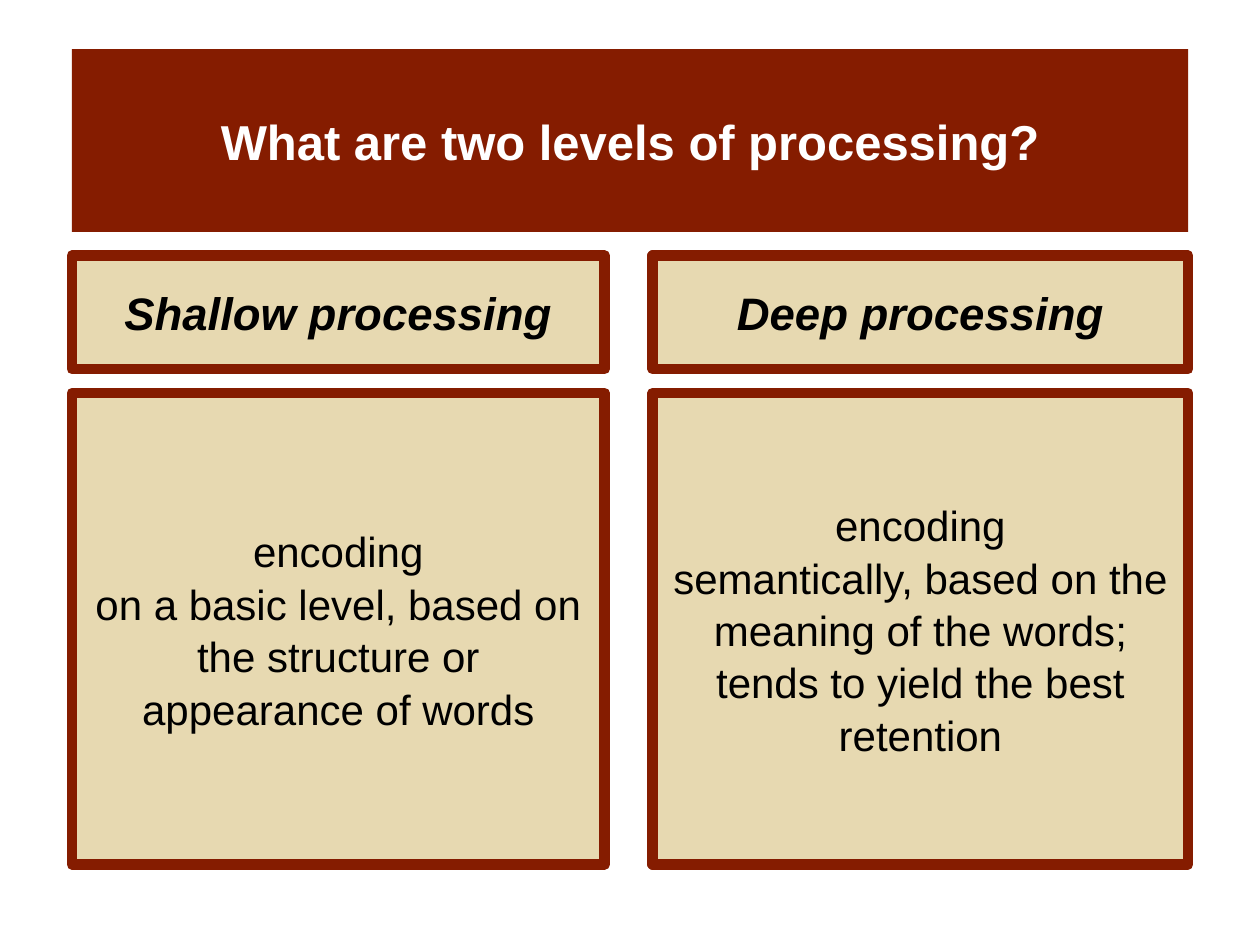
from pptx import Presentation
from pptx.dml.color import RGBColor
from pptx.enum.shapes import MSO_SHAPE
from pptx.enum.text import MSO_ANCHOR, PP_ALIGN
from pptx.util import Inches, Pt

RED, SAND, BLACK, WHITE = "851C00", "E7D9B1", "000000", "FFFFFF"

# Left edge, width, heading and definition of each column
COLUMNS = [
    (0.57, 4.23, "Shallow processing",
     ["encoding",
      "on a basic level, based on the structure or appearance of words"]),
    (5.18, 4.25, "Deep processing",
     ["encoding",
      "semantically, based on the",
      "meaning of the words; tends to yield the best retention"]),
]


def rgb(color):
    return RGBColor.from_string(color)


def place(sp, left, top, width, height):
    sp.left, sp.top = Inches(left), Inches(top)
    sp.width, sp.height = Inches(width), Inches(height)


def fill_solid(sp, color):
    sp.fill.solid()
    sp.fill.fore_color.rgb = rgb(color)


def write(sp, lines, size, color, bold=False, italic=False, spacing=1.0):
    tf = sp.text_frame
    tf.word_wrap = True
    tf.vertical_anchor = MSO_ANCHOR.MIDDLE
    tf.text = "\n".join(lines)
    for p in tf.paragraphs:
        p.alignment = PP_ALIGN.CENTER
        p.line_spacing = spacing
        p.font.name, p.font.size = "Arial", Pt(size)
        p.font.bold, p.font.italic = bold, italic
        p.font.color.rgb = rgb(color)


def add_title(s, text):
    sp = s.shapes.title
    place(sp, 0.57, 0.39, 8.86, 1.45)
    fill_solid(sp, RED)
    write(sp, [text], 28, WHITE, bold=True)


def add_box(s, left, top, width, height):
    sp = s.shapes.add_shape(MSO_SHAPE.RECTANGLE, Inches(left), Inches(top),
                            Inches(width), Inches(height))
    sp.shadow.inherit = False
    fill_solid(sp, SAND)
    sp.line.color.rgb = rgb(RED)
    sp.line.width = Pt(6)
    return sp


def main():
    prs = Presentation()
    prs.slide_width, prs.slide_height = Inches(10), Inches(7.5)
    s = prs.slides.add_slide(prs.slide_layouts[5])

    add_title(s, "What are two levels of processing?")

    # Heading box above definition box in each column
    for left, width, heading, definition in COLUMNS:
        write(add_box(s, left, 2.03, width, 0.9), [heading], 26, BLACK,
              bold=True, italic=True)
        write(add_box(s, left, 3.12, width, 3.74), definition, 24, BLACK,
              spacing=1.04)

    prs.save("out.pptx")


if __name__ == "__main__":
    main()
